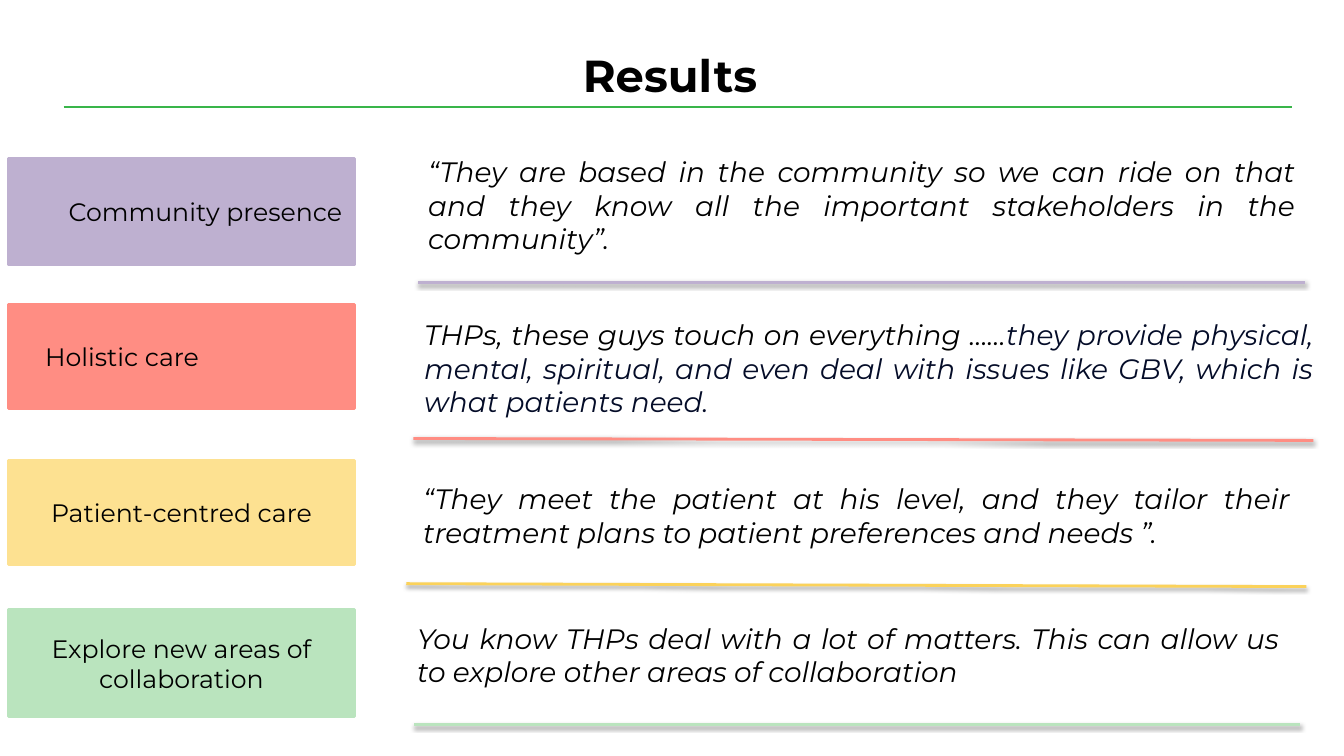
from lxml import etree
from pptx import Presentation
from pptx.dml.color import RGBColor
from pptx.enum.shapes import MSO_CONNECTOR, MSO_SHAPE
from pptx.enum.text import MSO_ANCHOR, MSO_AUTO_SIZE, PP_ALIGN
from pptx.oxml.ns import qn
from pptx.util import Pt

RECT = MSO_SHAPE.RECTANGLE
STRAIGHT = MSO_CONNECTOR.STRAIGHT
CENTER, JUSTIFY = PP_ALIGN.CENTER, PP_ALIGN.JUSTIFY
TOP, MIDDLE = MSO_ANCHOR.TOP, MSO_ANCHOR.MIDDLE
FONT = "Montserrat"
BLACK, NAVY, WHITE, GREEN = "000000", "040C28", "FFFFFF", "39B54A"
INSET = 7.2
LABEL_X, LABEL_W = 5.8, 247.7

# Each row: label box (top, height), quote box relative to the label's
# left and top, and rule ends relative to the same corner.
ROWS = [
    dict(top=113, height=76.3, fill="BEB0D0", rule_color="BEB0D0",
         label="Community presence", align=JUSTIFY, indent=36,
         quote=[("“They are based in the community so we can ride on that and they "
                 "know all the important stakeholders in the community”.", BLACK)],
         quote_box=(293, -14.4, 633.6, 95.8), rule=(293, 88.6, 926.6, 88.6)),
    dict(top=217.4, height=74.2, fill="FF8D83", rule_color="FF8D83",
         label="Holistic care", align=JUSTIFY, indent=19.2,
         quote=[("THPs, these guys touch on everything ……", BLACK),
                ("they provide physical, mental, spiritual, and even deal with "
                 "issues like GBV, which is what patients need.", NAVY)],
         quote_box=(290.1, 4.4, 649.4, 82.1), rule=(289.4, 95.8, 932.4, 97.2)),
    dict(top=329, height=74.2, fill="FDE191", rule_color="FBD25A",
         label="Patient-centred care", align=CENTER, indent=0,
         quote=[("“They meet the patient at his level, and they tailor their "
                 "treatment plans to patient preferences and needs ”.", BLACK)],
         quote_box=(289.4, -1.4, 633.6, 81.4), rule=(284.4, 87.9, 927.3, 90)),
    dict(top=435.6, height=76.3, fill="BAE4BE", rule_color="BAE4BE",
         label="Explore new areas of collaboration", align=CENTER, indent=0,
         quote=[("You know THPs deal with a lot of matters. This can allow us to "
                 "explore other areas of collaboration", BLACK)],
         quote_box=(285.1, -0.7, 630, 65.5), rule=(290.1, 82.1, 923, 82.1)),
]


def rgb(color):
    return RGBColor.from_string(color)


def style_run(r, size, color, bold=False, italic=False):
    r.font.name = FONT
    r.font.size = Pt(size)
    r.font.bold = bold
    r.font.italic = italic
    r.font.color.rgb = rgb(color)


def add_box(s, x, y, w, h, color, runs, size, align, indent=0, italic=False):
    sp = s.shapes.add_shape(RECT, Pt(x), Pt(y), Pt(w), Pt(h))
    sp.shadow.inherit = False
    sp.fill.solid()
    sp.fill.fore_color.rgb = rgb(color)
    sp.line.color.rgb = rgb(color)
    sp.line.width = Pt(2)
    tf = sp.text_frame
    tf.word_wrap = True
    tf.vertical_anchor = MIDDLE
    tf.margin_left = Pt(INSET + indent)
    p = tf.paragraphs[0]
    p.alignment = align
    for text, text_color in runs:
        r = p.add_run()
        r.text = text
        style_run(r, size, text_color, italic=italic)


def add_rule(s, x1, y1, x2, y2, color, width, shadow=False):
    line = s.shapes.add_connector(STRAIGHT, Pt(x1), Pt(y1), Pt(x2), Pt(y2))
    line.line.color.rgb = rgb(color)
    line.line.width = Pt(width)
    effects = etree.SubElement(line._element.spPr, qn("a:effectLst"))
    if shadow:
        outer = etree.SubElement(effects, qn("a:outerShdw"), blurRad=str(Pt(3.1)),
                                 dist=str(Pt(1.6)), dir="5400000", rotWithShape="0")
        tint = etree.SubElement(outer, qn("a:srgbClr"), val=BLACK)
        etree.SubElement(tint, qn("a:alpha"), val="38000")


def add_title(s, x, y, w, h):
    sp = s.shapes.title
    sp.left, sp.top, sp.width, sp.height = Pt(x), Pt(y), Pt(w), Pt(h)
    tf = sp.text_frame
    tf.text = "Results "
    tf.auto_size = MSO_AUTO_SIZE.NONE
    tf.vertical_anchor = TOP
    p = tf.paragraphs[0]
    p.alignment = CENTER
    style_run(p.runs[0], 32, BLACK, bold=True)
    # Green rule under the title
    add_rule(s, x, y + 46.1, x + w + 2.2, y + 46.1, GREEN, 1.5)


def add_row(s, x, y, w, h, row):
    # Theme label
    add_box(s, x, y, w, h, row["fill"], [(row["label"], BLACK)], 18,
            row["align"], row["indent"])
    # Quote
    dx, dy, quote_w, quote_h = row["quote_box"]
    add_box(s, x + dx, y + dy, quote_w, quote_h, WHITE, row["quote"], 20,
            JUSTIFY, italic=True)
    # Shadowed rule below the quote
    x1, y1, x2, y2 = row["rule"]
    add_rule(s, x + x1, y + y1, x + x2, y + y2, row["rule_color"], 2, shadow=True)


def main():
    prs = Presentation()
    prs.slide_width, prs.slide_height = Pt(960), Pt(540)
    s = prs.slides.add_slide(prs.slide_layouts[5])
    add_title(s, 45.4, 30.2, 875.5, 42.5)
    for row in ROWS:
        add_row(s, LABEL_X, row["top"], LABEL_W, row["height"], row)
    prs.save("out.pptx")


if __name__ == "__main__":
    main()
